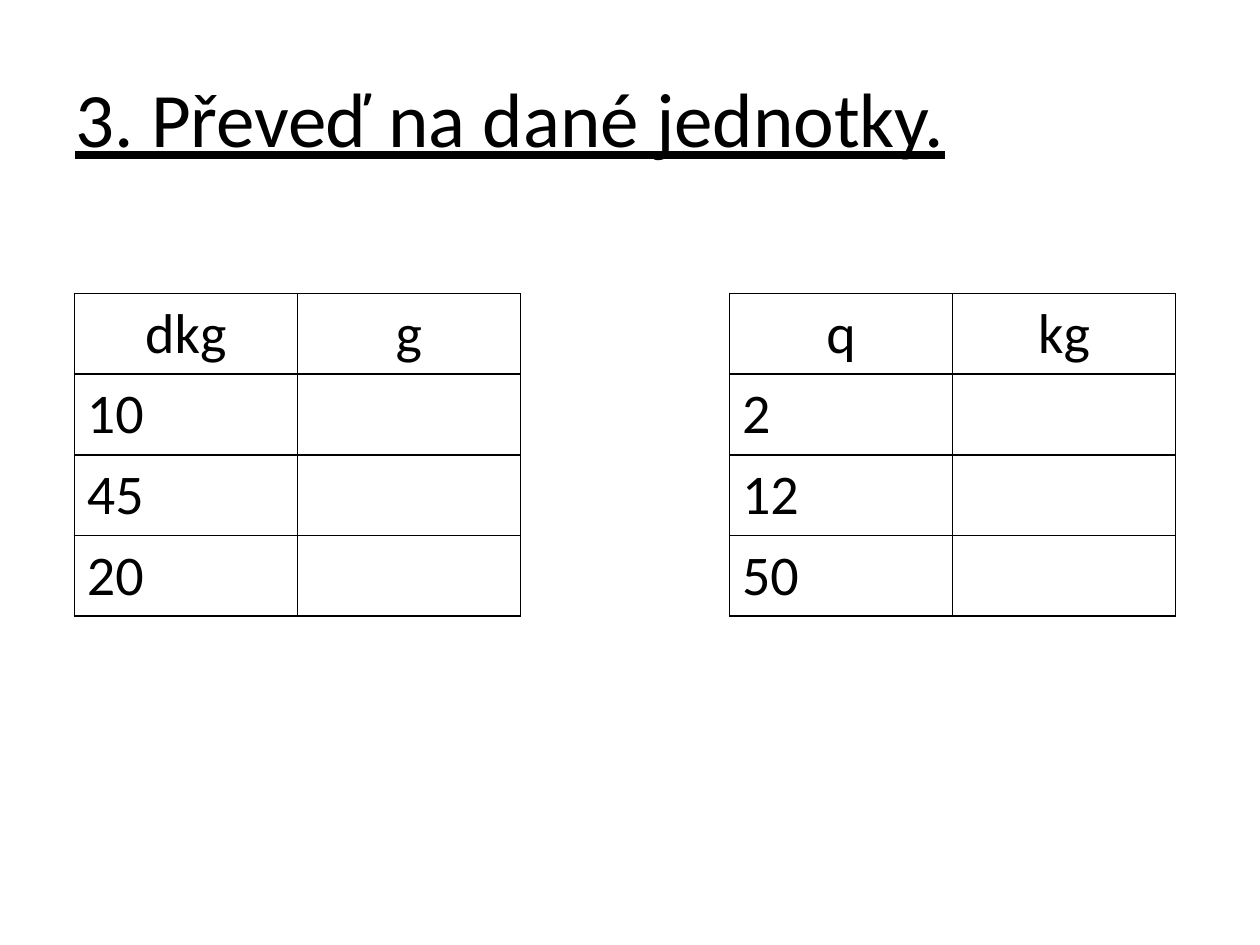
from dataclasses import dataclass

from lxml import etree
from pptx import Presentation
from pptx.dml.color import RGBColor
from pptx.enum.text import MSO_ANCHOR, PP_ALIGN
from pptx.oxml.ns import qn
from pptx.slide import Slide
from pptx.table import _Cell
from pptx.text.text import Font
from pptx.util import Inches, Pt

MIDDLE = MSO_ANCHOR.MIDDLE
CENTER, LEFT = PP_ALIGN.CENTER, PP_ALIGN.LEFT
BLANK_LAYOUT = 6
BORDER_SIDES = ("a:lnL", "a:lnR", "a:lnT", "a:lnB")


@dataclass(frozen=True)
class Theme:
    font: str = "Calibri"
    ink: str = "000000"
    title_size: int = 44
    table_size: int = 32
    border_width: int = 1


@dataclass(frozen=True)
class UnitTable:
    left: float
    units: tuple[str, str]
    amounts: tuple[str, ...]


THEME = Theme()
TABLE_TOP = 2.33
COLUMN_WIDTH = 1.77
ROW_HEIGHT = 0.64
UNIT_TABLES = (
    UnitTable(0.59, ("dkg", "g"), ("10", "45", "20")),
    UnitTable(5.79, ("q", "kg"), ("2", "12", "50")),
)


def style_font(font: Font, size: int) -> None:
    font.name = THEME.font
    font.size = Pt(size)
    font.color.rgb = RGBColor.from_string(THEME.ink)


def add_borders(cell: _Cell) -> None:
    properties = cell._tc.get_or_add_tcPr()
    for position, side in enumerate(BORDER_SIDES):
        line = etree.Element(qn(side), w=str(Pt(THEME.border_width)))
        fill = etree.SubElement(line, qn("a:solidFill"))
        etree.SubElement(fill, qn("a:srgbClr"), val=THEME.ink)
        properties.insert(position, line)


def add_title(slide: Slide, text: str) -> None:
    box = slide.shapes.add_textbox(Inches(0.5), Inches(0.3), Inches(9), Inches(1.25))
    frame = box.text_frame
    frame.word_wrap = True
    frame.vertical_anchor = MIDDLE
    para = frame.paragraphs[0]
    para.text = text
    style_font(para.font, THEME.title_size)
    para.font.underline = True


def add_unit_table(slide: Slide, unit_table: UnitTable) -> None:
    """Draw the units as a heading row, with an empty answer beside each amount."""
    rows = [unit_table.units] + [(amount, "") for amount in unit_table.amounts]
    columns = len(unit_table.units)
    table = slide.shapes.add_table(
        len(rows), columns,
        Inches(unit_table.left), Inches(TABLE_TOP),
        Inches(COLUMN_WIDTH * columns), Inches(ROW_HEIGHT * len(rows)),
    ).table
    table.first_row = table.horz_banding = False
    for row_index, texts in enumerate(rows):
        for column_index, text in enumerate(texts):
            cell = table.cell(row_index, column_index)
            cell.fill.background()
            cell.vertical_anchor = MIDDLE
            add_borders(cell)
            para = cell.text_frame.paragraphs[0]
            para.text = text
            para.alignment = CENTER if row_index == 0 else LEFT
            style_font(para.font, THEME.table_size)


def main() -> None:
    deck = Presentation()
    deck.slide_width, deck.slide_height = Inches(10), Inches(7.5)
    slide = deck.slides.add_slide(deck.slide_layouts[BLANK_LAYOUT])
    add_title(slide, "3. Převeď na dané jednotky.")
    for unit_table in UNIT_TABLES:
        add_unit_table(slide, unit_table)
    deck.save("out.pptx")


if __name__ == "__main__":
    main()
